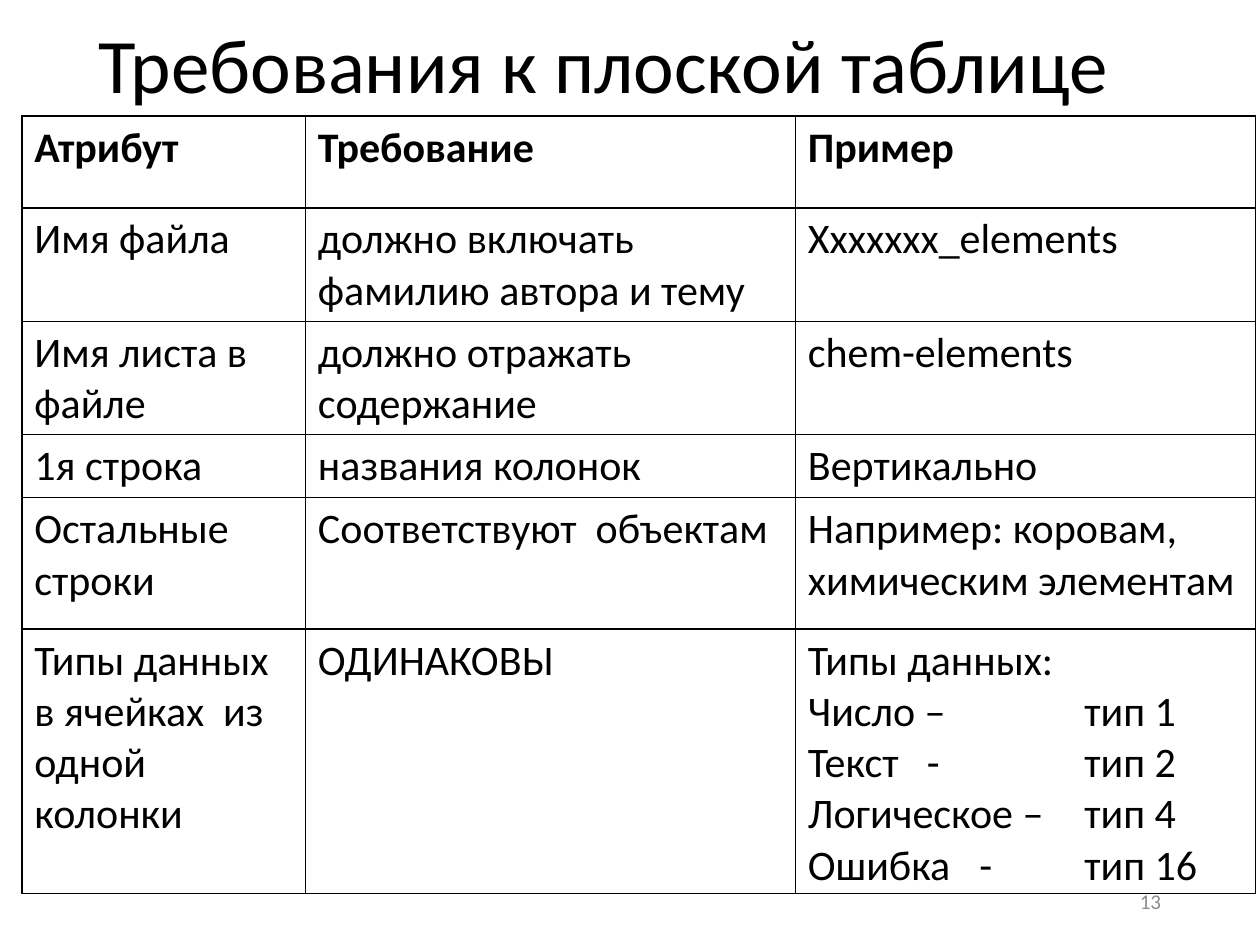
import dataclasses

import pptx
import pptx.dml.color
import pptx.enum.text
import pptx.oxml.ns
import pptx.util
from lxml import etree

Pt = pptx.util.Pt
PP_ALIGN = pptx.enum.text.PP_ALIGN
MIDDLE = pptx.enum.text.MSO_ANCHOR.MIDDLE


@dataclasses.dataclass(frozen=True)
class Theme:
    font: str = "Calibri"
    ink: str = "000000"
    muted: str = "8C8C8C"
    title_size: int = 44
    body_size: int = 24
    number_size: int = 12
    border_width: int = 1


class SlideBuilder:
    def __init__(self, slide, theme):
        self.slide = slide
        self.theme = theme

    def style(self, paragraph, size, color, bold=False):
        font = paragraph.font
        font.name = self.theme.font
        font.size = Pt(size)
        font.bold = bold
        font.color.rgb = pptx.dml.color.RGBColor.from_string(color)

    def text(self, wording, box, size, color, align=PP_ALIGN.LEFT, spacing=1.0):
        frame = self.slide.shapes.add_textbox(*map(Pt, box)).text_frame
        frame.word_wrap = True
        frame.vertical_anchor = MIDDLE
        paragraph = frame.paragraphs[0]
        paragraph.text = wording
        paragraph.alignment = align
        paragraph.line_spacing = spacing
        self.style(paragraph, size, color)

    def table(self, rows, left, top, widths, heights):
        table = self.slide.shapes.add_table(
            len(rows), len(widths), Pt(left), Pt(top),
            Pt(sum(widths)), Pt(sum(heights))).table
        table.first_row = True
        table.horz_banding = False
        for column, width in zip(table.columns, widths):
            column.width = Pt(width)
        for row, height in zip(table.rows, heights):
            row.height = Pt(height)
        for r, row in enumerate(rows):
            for c, content in enumerate(row):
                self.fill_cell(table.cell(r, c), content, bold=r == 0)

    def fill_cell(self, cell, content, bold):
        """Content is a string, or a list of (wording, tab stops) paragraphs."""
        self.border(cell)
        cell.fill.background()
        lines = [(content, ())] if isinstance(content, str) else content
        frame = cell.text_frame
        for i, (wording, stops) in enumerate(lines):
            paragraph = frame.add_paragraph() if i else frame.paragraphs[0]
            paragraph.text = wording
            paragraph.alignment = PP_ALIGN.LEFT
            if stops:
                self.tab_stops(paragraph, stops)
            self.style(paragraph, self.theme.body_size, self.theme.ink, bold)

    def border(self, cell):
        qn = pptx.oxml.ns.qn
        properties = cell._tc.get_or_add_tcPr()
        for side in ("lnL", "lnR", "lnT", "lnB"):
            line = etree.SubElement(properties, qn(f"a:{side}"),
                                    w=str(Pt(self.theme.border_width)))
            fill = etree.SubElement(line, qn("a:solidFill"))
            etree.SubElement(fill, qn("a:srgbClr"), val=self.theme.ink)

    def tab_stops(self, paragraph, stops):
        qn = pptx.oxml.ns.qn
        tabs = etree.SubElement(paragraph._p.get_or_add_pPr(), qn("a:tabLst"))
        for stop in stops:
            etree.SubElement(tabs, qn("a:tab"), pos=str(Pt(stop)), algn="l")


TYPE_STOP = 158
DATA_TYPES = [
    ("Типы данных:\vЧисло –\tтип 1", (TYPE_STOP,)),
    ("Текст\t-\tтип 2", (68, TYPE_STOP)),
    ("Логическое –\tтип 4", (TYPE_STOP,)),
    ("Ошибка\t-\tтип 16", (98, TYPE_STOP)),
]
REQUIREMENTS = [
    ("Атрибут", "Требование", "Пример"),
    ("Имя файла", "должно включать фамилию автора и тему", "Xxxxxxx_elements"),
    ("Имя листа в файле", "должно отражать содержание", "chem-elements"),
    ("1я строка", "названия колонок", "Вертикально"),
    ("Остальные строки", "Соответствуют  объектам",
     "Например: коровам,\vхимическим элементам"),
    ("Типы данных в ячейках  из одной колонки", "ОДИНАКОВЫ", DATA_TYPES),
]


def main():
    presentation = pptx.Presentation()
    presentation.slide_width = Pt(720)
    presentation.slide_height = Pt(540)
    theme = Theme()
    slide = presentation.slides.add_slide(presentation.slide_layouts[6])
    builder = SlideBuilder(slide, theme)

    builder.text("Требования к плоской таблице", (49.5, 8, 621, 62.5),
                 theme.title_size, theme.ink, spacing=0.9)
    builder.text("13", (508.5, 500.5, 162, 28.75),
                 theme.number_size, theme.muted, PP_ALIGN.RIGHT)
    builder.table(REQUIREMENTS, left=12.5, top=66.25, widths=(162, 280, 263),
                  heights=(52.5, 52.5, 52.5, 30.5, 75, 75))
    presentation.save("out.pptx")


if __name__ == "__main__":
    main()
